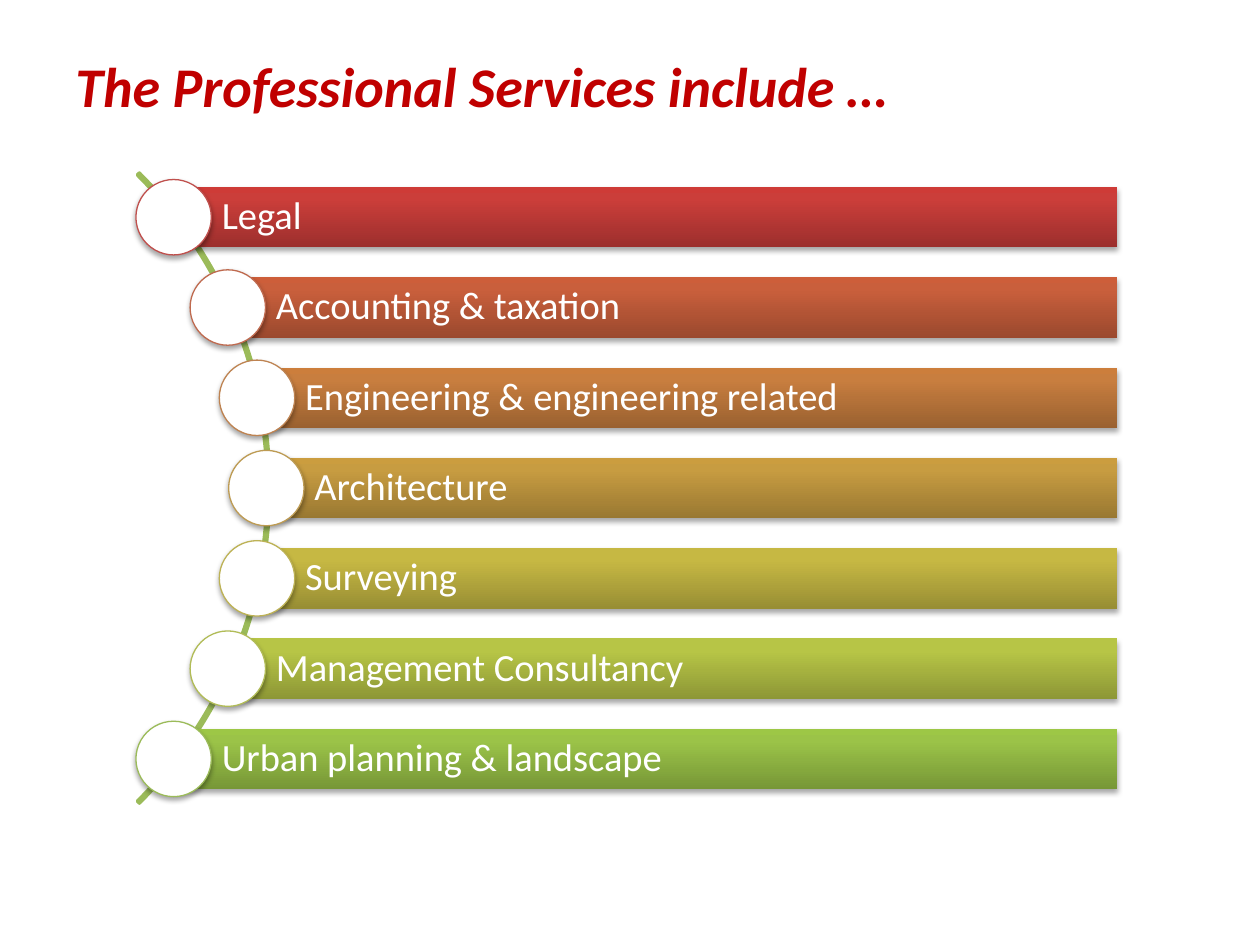
from copy import deepcopy
from math import sqrt

from lxml import etree
from pptx import Presentation
from pptx.dml.color import RGBColor
from pptx.enum.shapes import MSO_SHAPE
from pptx.enum.text import MSO_ANCHOR
from pptx.oxml.ns import qn
from pptx.util import Cm, Pt

RECTANGLE, OVAL, BLOCK_ARC = MSO_SHAPE.RECTANGLE, MSO_SHAPE.OVAL, MSO_SHAPE.BLOCK_ARC
MIDDLE = MSO_ANCHOR.MIDDLE

COLOURS = {"title": "C00000", "white": "FFFFFF", "arc": "9BBB59", "shadow": "000000"}

# Label, circle outline, bar gradient from bottom to top
SERVICES = [
    ("Legal", "C0504D", ("9C2F2D", "CB3E3A", "CE3B37")),
    ("Accounting & taxation", "BF6A4F", ("9B492E", "C95F3C", "CD5E3A")),
    ("Engineering & engineering related", "BE8351", ("9A6130", "C87E3F", "CC7E3C")),
    ("Architecture", "BD9B53", ("997832", "C79C41", "CB9D3F")),
    ("Surveying", "BDB255", ("988E34", "C6B843", "C9BB41")),
    ("Management Consultancy", "B1BC57", ("8D9736", "B7C546", "B9C844")),
    ("Urban planning & landscape", "9BBB59", ("779737", "9BC348", "9DC746")),
]
GRADIENT_POSITIONS = (0, 0.8, 1)

# Geometry in centimetres
ARC_X, ARC_Y, ARC_SIZE = -3.54, 9.84, 17.96
CIRCLE_TRACK = 8.91
ROW_PITCH, BAR_HEIGHT, BAR_RIGHT, CIRCLE_SIZE = 1.82, 1.22, 22.52, 1.52


class SlideBuilder:
    font = "Calibri"

    def __init__(self, slide):
        self.slide = slide

    def add_run(self, paragraph, text, size, colour, bold=False, italic=False):
        run = paragraph.add_run()
        run.text = text
        run.font.name = self.font
        run.font.size = Pt(size)
        run.font.bold = bold
        run.font.italic = italic
        run.font.color.rgb = RGBColor.from_string(colour)

    def add_shape(self, kind, left, top, width, height):
        shape = self.slide.shapes.add_shape(kind, Cm(left), Cm(top), Cm(width), Cm(height))
        shape.shadow.inherit = False
        return shape

    def set_line(self, shape, colour, width):
        shape.line.color.rgb = RGBColor.from_string(colour)
        shape.line.width = Pt(width)

    def add_shadow(self, shape):
        effects = shape._element.spPr.find(qn("a:effectLst"))
        shadow = etree.SubElement(effects, qn("a:outerShdw"), blurRad=str(Pt(3.1)),
                                  dist=str(Pt(1.8)), dir="5400000", rotWithShape="0")
        colour = etree.SubElement(shadow, qn("a:srgbClr"), val=COLOURS["shadow"])
        etree.SubElement(colour, qn("a:alpha"), val="35000")

    def set_gradient(self, shape, colours):
        shape.fill.gradient()
        shape.fill.gradient_angle = 90
        first_stop = next(shape._element.spPr.iter(qn("a:gs")))
        first_stop.addnext(deepcopy(first_stop))
        for stop, position, colour in zip(shape.fill.gradient_stops, GRADIENT_POSITIONS, colours):
            stop.position = position
            stop.color.rgb = RGBColor.from_string(colour)

    def title(self, text):
        box = self.slide.shapes.add_textbox(Cm(1.27), Cm(0.13), Cm(22.86), Cm(3.18))
        frame = box.text_frame
        frame.word_wrap = True
        frame.vertical_anchor = MIDDLE
        self.add_run(frame.paragraphs[0], text, 32, COLOURS["title"], bold=True, italic=True)

    def arc(self):
        shape = self.add_shape(BLOCK_ARC, ARC_X - ARC_SIZE / 2, ARC_Y - ARC_SIZE / 2,
                               ARC_SIZE, ARC_SIZE)
        for index, value in enumerate((189, 27, 0.003)):
            shape.adjustments[index] = value
        shape.fill.background()
        self.set_line(shape, COLOURS["arc"], 2)

    def bar(self, left, centre_y, text, colours):
        shape = self.add_shape(RECTANGLE, left, centre_y - BAR_HEIGHT / 2,
                               BAR_RIGHT - left, BAR_HEIGHT)
        self.set_gradient(shape, colours)
        shape.line.fill.background()
        self.add_shadow(shape)
        frame = shape.text_frame
        frame.word_wrap = True
        frame.vertical_anchor = MIDDLE
        frame.margin_left = Cm(0.97)
        frame.margin_top = frame.margin_right = frame.margin_bottom = Cm(0.15)
        paragraph = frame.paragraphs[0]
        paragraph.alignment = 1  # left
        paragraph.line_spacing = 0.9
        self.add_run(paragraph, text, 22, COLOURS["white"])

    def circle(self, centre_x, centre_y, outline):
        shape = self.add_shape(OVAL, centre_x - CIRCLE_SIZE / 2, centre_y - CIRCLE_SIZE / 2,
                               CIRCLE_SIZE, CIRCLE_SIZE)
        shape.fill.solid()
        shape.fill.fore_color.rgb = RGBColor.from_string(COLOURS["white"])
        self.set_line(shape, outline, 0.75)
        self.add_shadow(shape)


def main():
    presentation = Presentation()
    presentation.slide_width, presentation.slide_height = Cm(25.4), Cm(19.05)
    builder = SlideBuilder(presentation.slides.add_slide(presentation.slide_layouts[6]))

    # Curve behind the list
    builder.arc()

    # Bars start on the curve, each with a circle at its left end
    for index, (label, outline, gradient) in enumerate(SERVICES):
        offset = (index - len(SERVICES) // 2) * ROW_PITCH
        x = ARC_X + sqrt(CIRCLE_TRACK ** 2 - offset ** 2)
        y = ARC_Y + offset
        builder.bar(x, y, label, gradient)
        builder.circle(x, y, outline)

    # Heading
    builder.title("The Professional Services include …")

    presentation.save("out.pptx")


if __name__ == "__main__":
    main()
